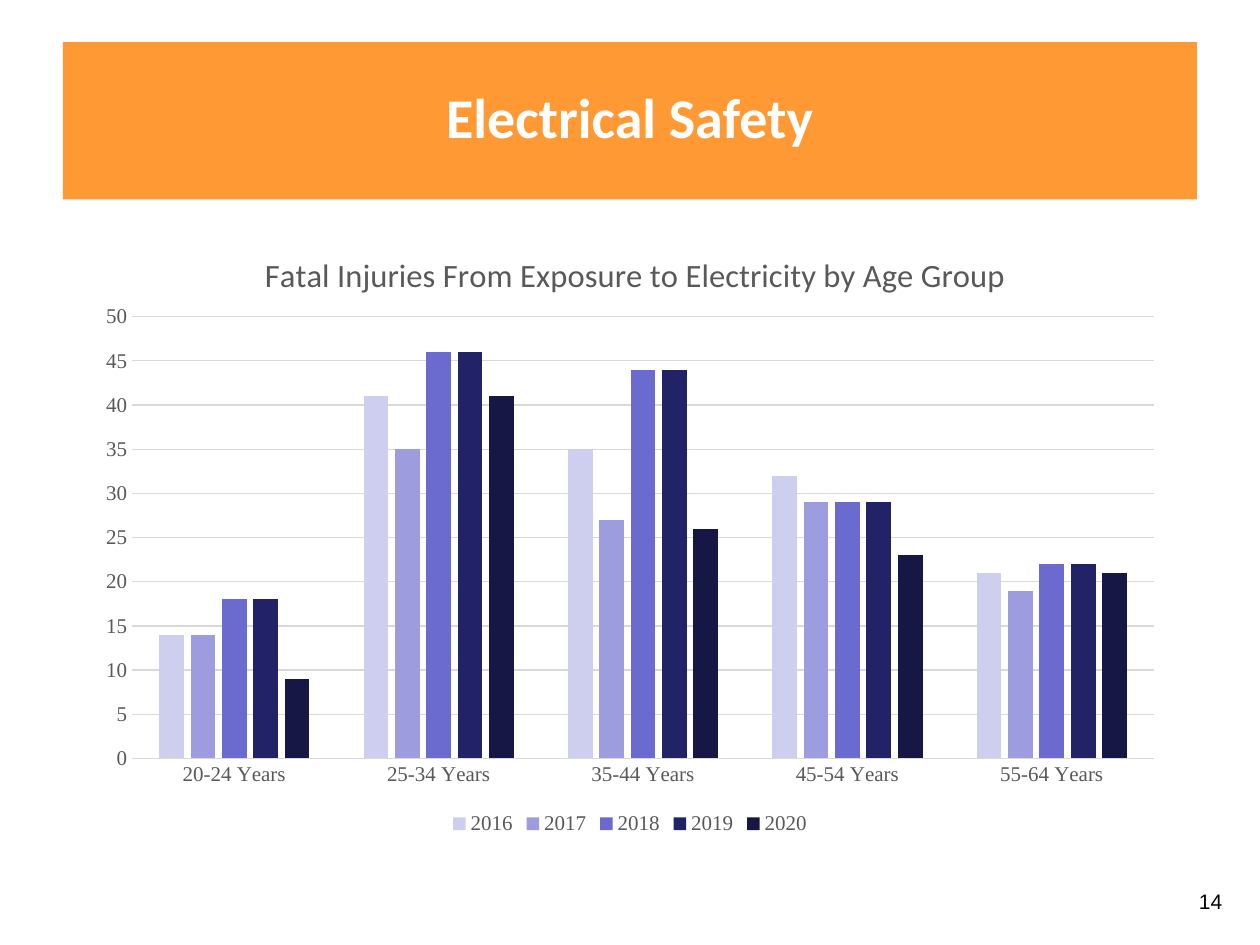
from dataclasses import dataclass

from lxml import etree
from pptx import Presentation
from pptx.chart.data import CategoryChartData
from pptx.dml.color import RGBColor
from pptx.enum import chart as charts, shapes, text
from pptx.oxml.ns import qn
from pptx.util import Pt


@dataclass(frozen=True)
class Theme:
    banner: str = "FF9933"
    on_banner: str = "FFFFFF"
    ink: str = "000000"
    label: str = "595959"
    grid: str = "D9D9D9"
    years: tuple = ("CECEEF", "9C9CDF", "6B6BCF", "222267", "171745")
    heading_font: str = "Calibri"
    chart_font: str = "Times New Roman"
    number_font: str = "Arial"
    heading_size: float = 32
    chart_title_size: float = 18.6
    small_size: float = 12


def style_font(font, name, size, color, bold=False):
    font.name, font.size, font.bold = name, Pt(size), bold
    font.color.rgb = RGBColor.from_string(color)


def write(frame, words, *, font, size, color, bold=False,
          align=text.PP_ALIGN.LEFT, anchor=text.MSO_ANCHOR.TOP):
    frame.word_wrap = True
    frame.vertical_anchor = anchor
    paragraph = frame.paragraphs[0]
    paragraph.alignment = align
    run = paragraph.add_run()
    run.text = words
    style_font(run.font, font, size, color, bold)


def add_layout(parent, position, **values):
    """Give a chart part a fixed place, as fractions of the chart."""
    for old in parent.findall(qn("c:layout")):
        parent.remove(old)
    layout = etree.Element(qn("c:layout"))
    manual = etree.SubElement(layout, qn("c:manualLayout"))
    for tag, value in values.items():
        etree.SubElement(manual, qn(f"c:{tag}")).set("val", str(value))
    parent.insert(position, layout)


class SlideBuilder:
    def __init__(self, slide, theme):
        self.slide, self.theme = slide, theme

    def banner(self, *box):
        band = self.slide.shapes.add_shape(
            shapes.MSO_SHAPE.RECTANGLE, *map(Pt, box))
        band.shadow.inherit = False
        band.fill.solid()
        band.fill.fore_color.rgb = RGBColor.from_string(self.theme.banner)
        band.line.fill.background()

    def label(self, words, *box, **style):
        area = self.slide.shapes.add_textbox(*map(Pt, box))
        write(area.text_frame, words, **style)

    def column_chart(self, title, categories, series, box, plot_box, title_at):
        theme = self.theme
        data = CategoryChartData()
        data.categories = categories
        for name, values in series.items():
            data.add_series(name, values)
        chart = self.slide.shapes.add_chart(
            charts.XL_CHART_TYPE.COLUMN_CLUSTERED, *map(Pt, box), data).chart
        small = (theme.chart_font, theme.small_size, theme.label)
        style_font(chart.font, *small)

        plot = chart.plots[0]
        plot.gap_width, plot.overlap, plot.vary_by_categories = 219, -27, False
        for columns, color in zip(plot.series, theme.years):
            columns.format.fill.solid()
            columns.format.fill.fore_color.rgb = RGBColor.from_string(color)

        values, ages = chart.value_axis, chart.category_axis
        values.minimum_scale, values.maximum_scale, values.major_unit = 0, 50, 5
        for axis in (values, ages):
            axis.major_tick_mark = charts.XL_TICK_MARK.NONE
            style_font(axis.tick_labels.font, *small)
        for line in (values.major_gridlines.format.line, ages.format.line):
            line.color.rgb = RGBColor.from_string(theme.grid)
            line.width = Pt(0.75)
        values.format.line.fill.background()

        chart.has_legend = True
        chart.legend.position = charts.XL_LEGEND_POSITION.BOTTOM
        chart.legend.include_in_layout = False
        style_font(chart.legend.font, *small)

        write(chart.chart_title.text_frame, title, font=theme.heading_font,
              size=theme.chart_title_size, color=theme.label,
              align=text.PP_ALIGN.CENTER)
        chart.chart_title.include_in_layout = False

        left, top, width, height = box
        x, y, w, h = plot_box
        add_layout(plot._element.getparent(), 0, layoutTarget="inner",
                   xMode="edge", yMode="edge",
                   x=(x - left) / width, y=(y - top) / height,
                   w=w / width, h=h / height)
        add_layout(chart.chart_title._element, 1, xMode="edge", yMode="edge",
                   x=(title_at[0] - left) / width,
                   y=(title_at[1] - top) / height)


def main():
    deck = Presentation()
    deck.slide_width, deck.slide_height = Pt(720), Pt(540)
    theme = Theme()
    page = SlideBuilder(deck.slides.add_slide(deck.slide_layouts[6]), theme)

    page.label("14", 678, 504, 29, 36, font=theme.number_font,
               size=theme.small_size, color=theme.ink)
    page.banner(36, 24, 648, 90)
    page.label("Electrical Safety", 36, 21.6, 648, 90,
               font=theme.heading_font, size=theme.heading_size,
               color=theme.on_banner, bold=True,
               align=text.PP_ALIGN.CENTER, anchor=text.MSO_ANCHOR.MIDDLE)
    page.column_chart(
        "Fatal Injuries From Exposure to Electricity by Age Group",
        ["20-24 Years", "25-34 Years", "35-44 Years", "45-54 Years",
         "55-64 Years"],
        {"2016": (14, 41, 35, 32, 21),
         "2017": (14, 35, 27, 29, 19),
         "2018": (18, 46, 44, 29, 22),
         "2019": (18, 46, 44, 29, 22),
         "2020": (9, 41, 26, 23, 21)},
        box=(48, 126, 624, 354), plot_box=(75.5, 181, 584, 252.5),
        title_at=(148, 140.5))
    deck.save("out.pptx")


if __name__ == "__main__":
    main()
